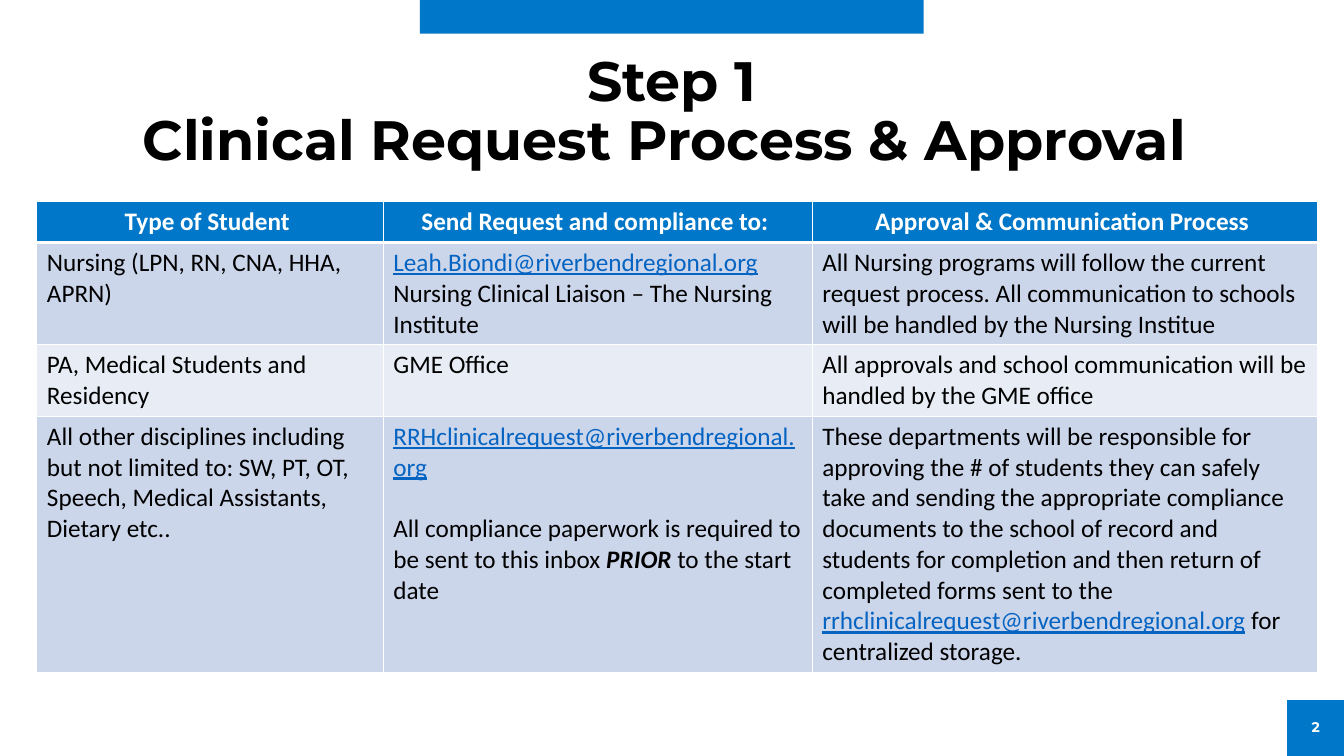
from dataclasses import dataclass

from lxml.etree import SubElement
from pptx import Presentation
from pptx.dml.color import RGBColor
from pptx.enum.shapes import MSO_SHAPE
from pptx.enum.text import MSO_ANCHOR, PP_ALIGN
from pptx.oxml.ns import qn
from pptx.util import Cm, Pt


@dataclass(frozen=True)
class Theme:
    blue: str = "0077C8"
    white: str = "FFFFFF"
    black: str = "000000"
    link: str = "0563C1"
    band_dark: str = "CCD6EB"
    band_light: str = "E7ECF5"
    heading_font: str = "Montserrat"
    body_font: str = "Calibri"
    title_size: float = 39.6
    table_size: float = 18
    number_size: float = 10


theme = Theme()


def style_run(run, font_name, size, color, bold=False):
    run.font.name = font_name
    run.font.size = Pt(size)
    run.font.bold = bold
    run.font.color.rgb = RGBColor.from_string(color)


def add_heading_text(slide, box, text, size, color):
    shape = slide.shapes.add_textbox(*map(Cm, box))
    text_frame = shape.text_frame
    text_frame.word_wrap = True
    text_frame.vertical_anchor = MSO_ANCHOR.MIDDLE
    text_frame.text = text
    paragraph = text_frame.paragraphs[0]
    paragraph.alignment = PP_ALIGN.CENTER
    paragraph.line_spacing = 0.9
    for run in paragraph.runs:
        style_run(run, theme.heading_font, size, color, bold=True)


presentation = Presentation()
presentation.slide_width = Cm(33.87)
presentation.slide_height = Cm(19.05)
slide = presentation.slides.add_slide(presentation.slide_layouts[6])

# Blue blocks: page number corner and top bar
for box in [(32.44, 17.64, 1.43, 1.41), (10.58, 0, 12.7, 0.85)]:
    block = slide.shapes.add_shape(MSO_SHAPE.RECTANGLE, *map(Cm, box))
    block.shadow.inherit = False
    block.fill.solid()
    block.fill.fore_color.rgb = RGBColor.from_string(theme.blue)
    block.line.fill.background()

# Title
add_heading_text(slide, (2.33, 1.01, 29.21, 3.68),
                 "Step 1\vClinical Request Process & Approval ",
                 theme.title_size, theme.black)

# Table content: each cell is a list of paragraphs, each a list of (text, style)
table_rows = [
    [
        [[("Type of Student ", "header")]],
        [[("Send Request and compliance to: ", "header")]],
        [[("Approval & Communication Process ", "header")]],
    ],
    [
        [[("Nursing (LPN, RN, CNA, HHA, APRN)", "body")]],
        [[("Leah.Biondi@riverbendregional.org", "link"), (" ", "body")],
         [("Nursing Clinical Liaison – The Nursing Institute", "body")]],
        [[("All Nursing programs will follow the current request process. "
           "All communication to schools will be handled by the Nursing Institue", "body")]],
    ],
    [
        [[("PA, Medical Students and Residency", "body")]],
        [[("GME Office", "body")]],
        [[("All approvals and school communication will be handled by the GME office", "body")]],
    ],
    [
        [[("All other disciplines including but not limited to: SW, PT, OT, Speech, "
           "Medical Assistants, Dietary etc..", "body")]],
        [[("RRHclinicalrequest@riverbendregional.org", "link"), (" ", "body")],
         [("All compliance paperwork is required to be sent to this inbox ", "body"),
          ("PRIOR", "strong"), (" to the start date", "body")]],
        [[("These departments will be responsible for approving the # of students they can "
           "safely take and sending the appropriate compliance documents to the school of "
           "record and students for completion and then return of completed forms sent to the ",
           "body"),
          ("rrhclinicalrequest@riverbendregional.org", "link"),
          (" for centralized storage.", "body")]],
    ],
]
column_widths = [8.73, 10.81, 12.74]
row_heights = [1.03, 2.57, 1.81, 6.47]
row_fills = [theme.blue, theme.band_dark, theme.band_light, theme.band_dark]
text_colors = {"header": theme.white, "body": theme.black,
               "strong": theme.black, "link": theme.link}

# Table grid
table = slide.shapes.add_table(
    len(row_heights), len(column_widths), Cm(0.93), Cm(5.08),
    Cm(sum(column_widths)), Cm(sum(row_heights))).table
for column, width in zip(table.columns, column_widths):
    column.width = Cm(width)
for row, height in zip(table.rows, row_heights):
    row.height = Cm(height)

for row_index, row_content in enumerate(table_rows):
    for column_index, paragraphs in enumerate(row_content):
        cell = table.cell(row_index, column_index)

        # White borders, thicker under the header, then the fill
        properties = cell._tc.get_or_add_tcPr()
        for side in ("lnL", "lnR", "lnT", "lnB"):
            under_header = (row_index, side) in [(0, "lnB"), (1, "lnT")]
            border = SubElement(properties, qn(f"a:{side}"),
                                w=str(Pt(3 if under_header else 1)))
            border_fill = SubElement(border, qn("a:solidFill"))
            SubElement(border_fill, qn("a:srgbClr"), val=theme.white)
        cell.fill.solid()
        cell.fill.fore_color.rgb = RGBColor.from_string(row_fills[row_index])

        # Cell text
        for paragraph_index, runs in enumerate(paragraphs):
            if paragraph_index == 0:
                paragraph = cell.text_frame.paragraphs[0]
            else:
                paragraph = cell.text_frame.add_paragraph()
                if row_index == 3:
                    paragraph.space_before = Pt(22)
            paragraph.alignment = PP_ALIGN.CENTER if row_index == 0 else PP_ALIGN.LEFT
            for text, style in runs:
                run = paragraph.add_run()
                run.text = text
                style_run(run, theme.body_font, theme.table_size, text_colors[style],
                          bold=style in ("header", "strong"))
                run.font.italic = style == "strong"
                run.font.underline = style == "link"

# Page number
add_heading_text(slide, (32.44, 17.83, 1.43, 1.02), "2", theme.number_size, theme.white)

presentation.save("out.pptx")
